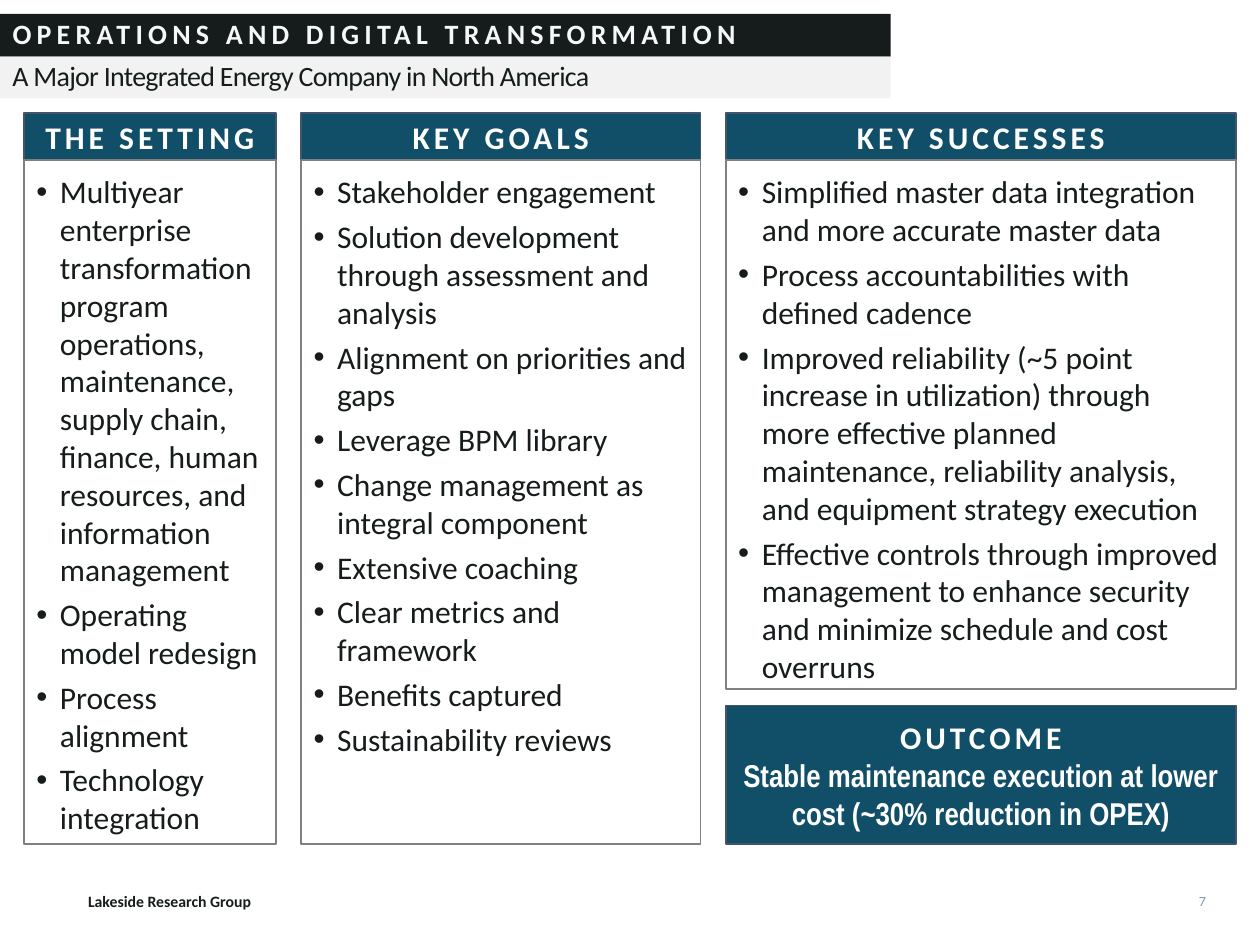
from lxml.etree import SubElement
from pptx import Presentation
from pptx.dml.color import RGBColor
from pptx.enum.shapes import MSO_SHAPE
from pptx.enum.text import MSO_ANCHOR, MSO_AUTO_SIZE, PP_ALIGN
from pptx.oxml.ns import qn
from pptx.util import Pt

INK = RGBColor(0x16, 0x1C, 0x1C)
PALE = RGBColor(0xF6, 0xF8, 0xF8)
WHITE = RGBColor(0xFF, 0xFF, 0xFF)
LIGHT_GRAY = RGBColor(0xF2, 0xF2, 0xF2)
GRAY = RGBColor(0x80, 0x80, 0x80)
TEAL = RGBColor(0x11, 0x4E, 0x67)
SLATE = RGBColor(0x44, 0x54, 0x69)
BLUE_GRAY = RGBColor(0x84, 0x97, 0xB0)

TITLE = "OPERATIONS AND DIGITAL TRANSFORMATION"
SUBTITLE = "A Major Integrated Energy Company in North America"
FOOTER = "Lakeside Research Group"
PAGE_NUMBER = "7"
OUTCOME = ("OUTCOME", "Stable maintenance execution at lower cost (~30% reduction in OPEX)")

# heading, width, body height, bullets
COLUMNS = [
    ("THE SETTING", 144, 391, [
        "Multiyear enterprise transformation program operations, maintenance, "
        "supply chain, finance, human resources, and information management",
        "Operating model redesign",
        "Process alignment",
        "Technology integration",
    ]),
    ("KEY GOALS", 228.2, 391, [
        "Stakeholder engagement",
        "Solution development through assessment and analysis",
        "Alignment on priorities and gaps",
        "Leverage BPM library",
        "Change management as integral component",
        "Extensive coaching",
        "Clear metrics and framework",
        "Benefits captured",
        "Sustainability reviews",
    ]),
    ("KEY SUCCESSES", 291.6, 302.4, [
        "Simplified master data integration and more accurate master data",
        "Process accountabilities with defined cadence",
        "Improved reliability (~5 point increase in utilization) through more effective "
        "planned maintenance, reliability analysis, and equipment strategy execution",
        "Effective controls through improved management to enhance security "
        "and minimize schedule and cost overruns",
    ]),
]

LEFT, GAP = 13.7, 14.4
HEADER_TOP, HEADER_HEIGHT = 64.8, 26.6
BODY_TOP = HEADER_TOP + HEADER_HEIGHT
BOTTOM = 482.4
OUTCOME_HEIGHT = 79.2
BANNER_WIDTH = 509
BULLET_INDENT = 13.5


def place(shape, left, top, width, height):
    shape.left, shape.top, shape.width, shape.height = map(Pt, (left, top, width, height))


def set_frame(shape, anchor, margins=(7.2, 3.6, 7.2, 3.6), wrap=True):
    frame = shape.text_frame
    frame.word_wrap = wrap
    frame.auto_size = MSO_AUTO_SIZE.NONE
    frame.vertical_anchor = anchor
    (frame.margin_left, frame.margin_top,
     frame.margin_right, frame.margin_bottom) = map(Pt, margins)
    return frame


def add_box(page, left, top, width, height, fill=None, line=None):
    box = page.shapes.add_shape(
        MSO_SHAPE.RECTANGLE, Pt(left), Pt(top), Pt(width), Pt(height))
    box.shadow.inherit = False
    if fill is None:
        box.fill.background()
    else:
        box.fill.solid()
        box.fill.fore_color.rgb = fill
    if line is None:
        box.line.fill.background()
    else:
        box.line.color.rgb = line
        box.line.width = Pt(1)
    return box


def write(para, text, size, color, bold=False, tracking=0, align=PP_ALIGN.LEFT, font="Calibri"):
    """Set a paragraph's text; tracking is letter spacing in points."""
    para.text = text
    para.alignment = align
    for span in para.runs:
        span.font.name = font
        span.font.size = Pt(size)
        span.font.bold = bold
        span.font.color.rgb = color
        if tracking:
            span.font._element.set("spc", str(round(tracking * 100)))


def add_bullet(para):
    properties = para._p.get_or_add_pPr()
    properties.set("marL", str(Pt(BULLET_INDENT)))
    properties.set("indent", str(-Pt(BULLET_INDENT)))
    SubElement(properties, qn("a:buFont")).set("typeface", "Arial")
    SubElement(properties, qn("a:buChar")).set("char", "•")


def write_heading(para, text):
    write(para, text, 18, WHITE, True, 2.3, PP_ALIGN.CENTER)


def add_banners(page):
    title = page.shapes.title
    place(title, 0, 7.9, BANNER_WIDTH, 24.5)
    title.fill.solid()
    title.fill.fore_color.rgb = INK
    para = set_frame(title, MSO_ANCHOR.MIDDLE).paragraphs[0]
    write(para, TITLE, 16, PALE, True, 3)
    para.line_spacing = 0.9
    para.space_before = Pt(0)

    subtitle = add_box(page, 0, 32.4, BANNER_WIDTH, 23.8, LIGHT_GRAY)
    para = set_frame(subtitle, MSO_ANCHOR.MIDDLE, (7.2,) * 4).paragraphs[0]
    write(para, SUBTITLE, 16, INK, tracking=-0.4)
    para.line_spacing = 0.9


def add_column(page, left, heading, width, height, bullets):
    header = add_box(page, left, HEADER_TOP, width, HEADER_HEIGHT, TEAL, SLATE)
    write_heading(set_frame(header, MSO_ANCHOR.MIDDLE).paragraphs[0], heading)

    body = add_box(page, left, BODY_TOP, width, height, line=GRAY)
    frame = set_frame(body, MSO_ANCHOR.TOP, (7.2, 7.2, 7.2, 3.6))
    for index, text in enumerate(bullets):
        para = frame.add_paragraph() if index else frame.paragraphs[0]
        add_bullet(para)
        write(para, text, 18, INK)
        para.space_after = Pt(4)


def add_outcome(page, left, width):
    box = add_box(page, left, BOTTOM - OUTCOME_HEIGHT, width, OUTCOME_HEIGHT, TEAL, SLATE)
    frame = set_frame(box, MSO_ANCHOR.MIDDLE)
    heading, result = OUTCOME
    write_heading(frame.paragraphs[0], heading)
    write(frame.add_paragraph(), result, 18, WHITE, True,
          align=PP_ALIGN.CENTER, font="Arial Narrow")


def add_footer(page):
    footer = page.shapes.add_textbox(Pt(43.2), Pt(506.2), Pt(111.6), Pt(18))
    frame = set_frame(footer, MSO_ANCHOR.MIDDLE, wrap=False)
    write(frame.paragraphs[0], FOOTER, 9, INK, True)
    number = page.shapes.add_textbox(Pt(524.9), Pt(500.4), Pt(171.4), Pt(28.8))
    frame = set_frame(number, MSO_ANCHOR.MIDDLE)
    write(frame.paragraphs[0], PAGE_NUMBER, 8, BLUE_GRAY, align=PP_ALIGN.RIGHT)


def main():
    deck = Presentation()
    deck.slide_width, deck.slide_height = Pt(720), Pt(540)
    page = deck.slides.add_slide(deck.slide_layouts.get_by_name("Title Only"))
    add_banners(page)
    left = LEFT
    for heading, width, height, bullets in COLUMNS:
        add_column(page, left, heading, width, height, bullets)
        left += width + GAP
    add_outcome(page, left - width - GAP, width)
    add_footer(page)
    deck.save("out.pptx")


if __name__ == "__main__":
    main()
